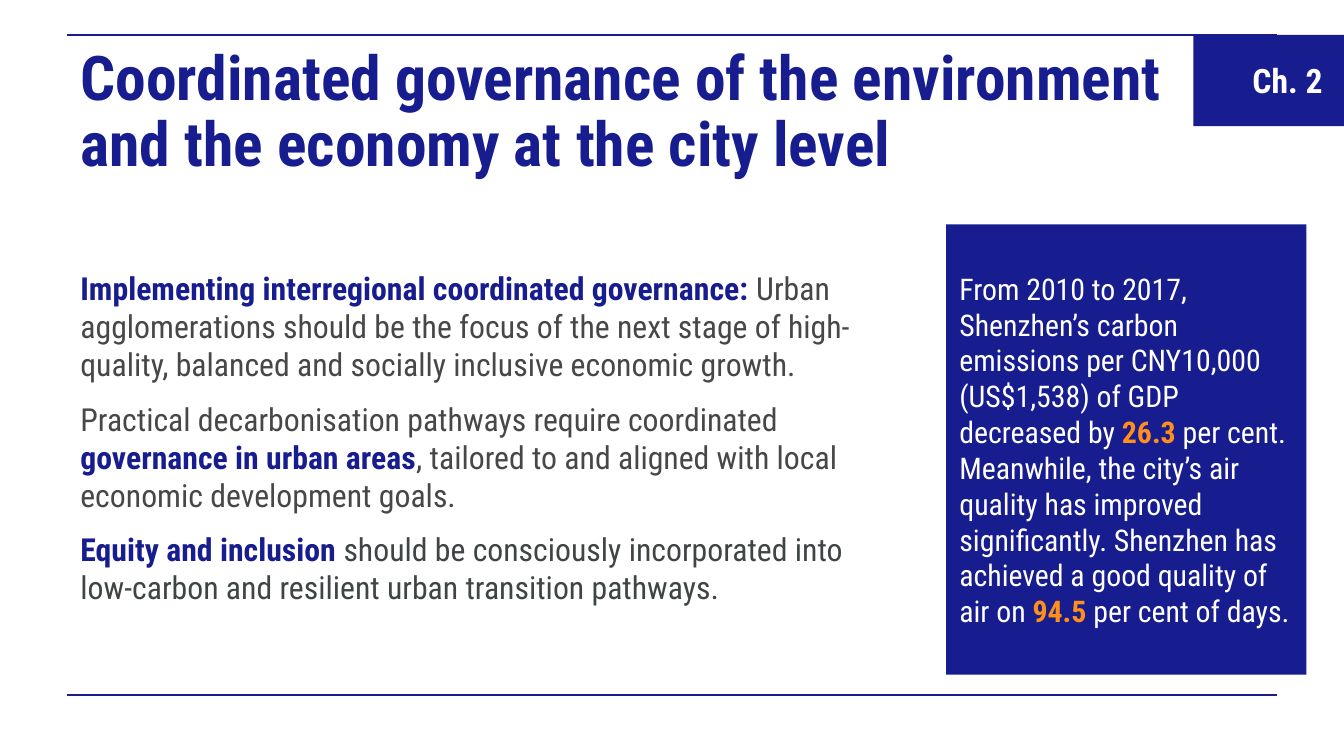
from typing import NamedTuple

from lxml.etree import SubElement
from pptx import Presentation
from pptx.dml.color import RGBColor
from pptx.enum.shapes import MSO_CONNECTOR, MSO_SHAPE
from pptx.enum.text import MSO_ANCHOR, MSO_AUTO_SIZE, PP_ALIGN
from pptx.oxml.ns import qn
from pptx.util import Inches, Pt

NAVY = RGBColor(0x17, 0x1C, 0x8F)
ORANGE = RGBColor(0xFF, 0x8F, 0x1C)
GREY = RGBColor(0x47, 0x47, 0x47)
SLATE = RGBColor(0x3F, 0x44, 0x44)
WHITE = RGBColor(0xFF, 0xFF, 0xFF)
FONT = "Roboto Condensed"
PAGE_WIDTH = 10
PAGE_HEIGHT = PAGE_WIDTH * 9 / 16


class Area(NamedTuple):
    left: float
    top: float
    width: float
    height: float

    def lengths(self) -> list:
        return [Inches(value) for value in self]


class Span(NamedTuple):
    text: str
    color: RGBColor
    bold: bool = False


RULE_TOPS = (0.26, 5.17)
TITLE = [Span("Coordinated governance of the environment and the economy at the city level", NAVY, True)]
RECOMMENDATIONS = [
    [
        Span("Implementing interregional coordinated governance: ", NAVY, True),
        Span("Urban agglomerations should be the focus of the next stage of high-quality, "
             "balanced and socially inclusive economic growth.", GREY),
    ],
    [
        Span("Practical decarbonisation pathways require coordinated ", GREY),
        Span("governance in urban areas", NAVY, True),
        Span(", tailored to and aligned with local economic development goals.", GREY),
    ],
    [
        Span("Equity and inclusion ", NAVY, True),
        Span("should be consciously incorporated into low-carbon and resilient "
             "urban transition pathways.", SLATE),
    ],
]
SHENZHEN_FACTS = [
    Span("From 2010 to 2017, Shenzhen’s carbon emissions per CNY10,000 (US$1,538) "
         "of GDP decreased by ", WHITE),
    Span("26.3 ", ORANGE, True),
    Span("per cent. Meanwhile, the city’s air quality has improved significantly. "
         "Shenzhen has achieved a good quality of air on ", WHITE),
    Span("94.5 ", ORANGE, True),
    Span("per cent of days.", WHITE),
]


def set_format(target, values: dict) -> None:
    for name, value in values.items():
        setattr(target, name, value)


def write(box, paragraphs: list[list[Span]], size: float, line_spacing: float = 1.0,
          before: float = 0, after: float = 0, wrap: bool = True,
          anchor: MSO_ANCHOR = MSO_ANCHOR.TOP) -> None:
    """Fill a shape with left-aligned paragraphs; the first has no space before."""
    frame = box.text_frame
    set_format(frame, {"word_wrap": wrap, "auto_size": MSO_AUTO_SIZE.NONE, "vertical_anchor": anchor})
    for index, spans in enumerate(paragraphs):
        para = frame.add_paragraph() if index else frame.paragraphs[0]
        set_format(para, {
            "alignment": PP_ALIGN.LEFT,
            "line_spacing": line_spacing,
            "space_before": Pt(before if index else 0),
            "space_after": Pt(after),
        })
        for span in spans:
            run = para.add_run()
            run.text = span.text
            set_format(run.font, {"name": FONT, "size": Pt(size), "bold": span.bold})
            run.font.color.rgb = span.color


def add_rule(page, top: float) -> None:
    rule = page.shapes.add_connector(
        MSO_CONNECTOR.STRAIGHT, Inches(0.5), Inches(top), Inches(9.5), Inches(top))
    rule.line.color.rgb = NAVY
    rule.line.width = Pt(1)
    SubElement(rule._element.spPr, qn("a:effectLst"))


def add_panel(page, area: Area):
    panel = page.shapes.add_shape(MSO_SHAPE.RECTANGLE, *area.lengths())
    panel.shadow.inherit = False
    panel.fill.solid()
    panel.fill.fore_color.rgb = NAVY
    panel.line.fill.background()
    return panel


def add_text(page, area: Area, paragraphs: list[list[Span]], size: float, **layout) -> None:
    write(page.shapes.add_textbox(*area.lengths()), paragraphs, size, **layout)


def main() -> None:
    deck = Presentation()
    set_format(deck, {"slide_width": Inches(PAGE_WIDTH), "slide_height": Inches(PAGE_HEIGHT)})
    page = deck.slides.add_slide(deck.slide_layouts[5])

    for top in RULE_TOPS:
        add_rule(page, top)

    title = page.shapes.title
    set_format(title, dict(zip(("left", "top", "width", "height"),
                               Area(0.5, 0.3, 8.28, 1.17).lengths())))
    write(title, [TITLE], 33, line_spacing=0.9)

    add_text(page, Area(0.5, 1.95, 6.2, 3.67), RECOMMENDATIONS, 17, before=4.8, after=4)
    facts = add_panel(page, Area(7.04, 1.67, 2.68, 3.35))
    write(facts, [SHENZHEN_FACTS], 16, anchor=MSO_ANCHOR.MIDDLE)

    add_panel(page, Area(8.88, 0.26, 1.12, 0.68))
    add_text(page, Area(9.22, 0.4, 0.73, 0.4), [[Span("Ch. 2", WHITE, True)]], 18, wrap=False)

    deck.save("out.pptx")


if __name__ == "__main__":
    main()
